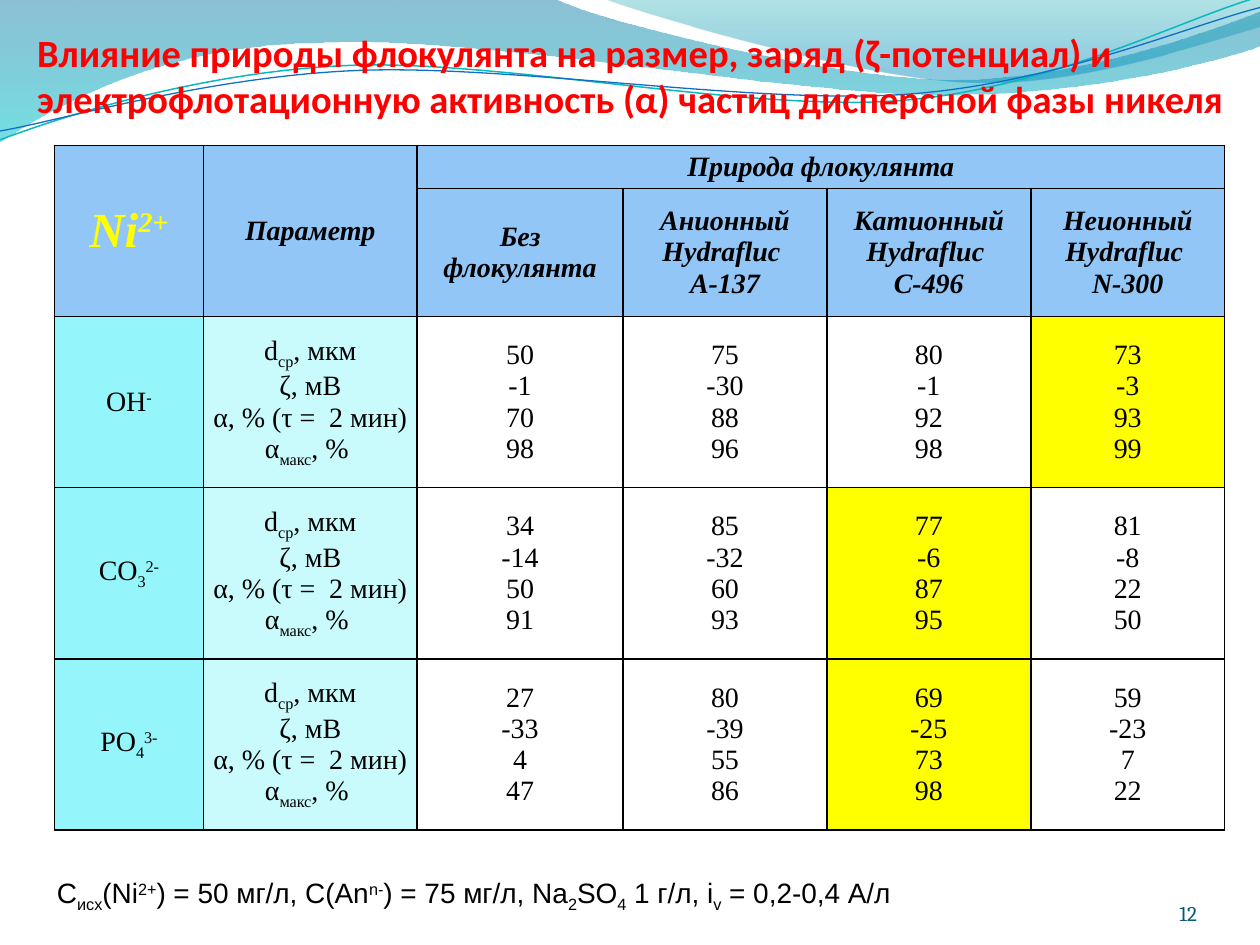
from lxml import etree
from pptx import Presentation
from pptx import util as u
from pptx.dml.color import RGBColor
from pptx.enum import text
from pptx.oxml.ns import qn

PARAMETERS = ["d|_ср|, мкм", "ζ, мВ", "α, % (τ =  2 мин)", "α|_макс|, % "]
FLOCCULANTS = ["Без флокулянта", "Анионный Hydrafluc \vA-137",
               "Катионный Hydrafluc \vC-496", "Неионный Hydrafluc \vN-300"]
# anion, values for each flocculant, index of the best flocculant
RESULTS = [
    ("ОН|^-", [(50, -1, 70, 98), (75, -30, 88, 96), (80, -1, 92, 98), (73, -3, 93, 99)], 3),
    ("CO|_3|^2-", [(34, -14, 50, 91), (85, -32, 60, 93), (77, -6, 87, 95), (81, -8, 22, 50)], 2),
    ("PO|_4|^3-", [(27, -33, 4, 47), (80, -39, 55, 86), (69, -25, 73, 98), (59, -23, 7, 22)], 2),
]
COLUMNS = [3.0, 4.31, 4.15, 4.11, 4.11, 3.91]
ROWS = [0.87, 2.58, 3.45, 3.45, 3.45]
HEADER, ANION, PARAMETER, BEST = "91C6F7", "94F5FA", "C9FAFC", "FFFF00"

# Wave outlines in tenths of the slide width: a pair is a line, six numbers a curve.
WIDE_WAVE = [(0, -0.01), (4.4, -0.01), (4.76, 0.17, 6.64, 0.63, 7.58, 0.63),
             (8.53, 0.63, 9.58, 0.26, 10, 0.09), (10.01, 0.36),
             (9.83, 0.44, 8.7, 0.76, 7.46, 0.75), (6.22, 0.75, 3.82, 0.28, 2.57, 0.34),
             (1.29, 0.35, 0.46, 0.83, -0.01, 1.13)]
RIGHT_WAVE = [(4.79, -0.01), (5.09, 0.11, 6.82, 0.62, 7.69, 0.65),
              (8.56, 0.69, 9.61, 0.32, 10, 0.21), (10, 0)]
TEAL_LINE = [(0, 1.11), (0.48, 0.93, 1.58, 0.57, 2.77, 0.52),
             (3.95, 0.47, 5.93, 0.89, 7.13, 0.8), (8.33, 0.71, 9.38, 0.15, 9.98, -0.02)]
BLUE_LINE = [(0, 1.04), (0.47, 0.96, 1.64, 0.61, 2.83, 0.56),
             (4.03, 0.51, 5.97, 0.83, 7.17, 0.75), (8.36, 0.67, 9.41, 0.21, 10, 0.06)]


def color(hex_value):
    return RGBColor.from_string(hex_value)


def write(paragraph, marked, font, size, hex_value, bold=False, italic=False, align=None):
    """Pieces are parted by |; a leading _ lowers a piece and ^ raises it."""
    paragraph.alignment = align
    style = paragraph.font
    style.name, style.size, style.bold, style.italic = font, u.Pt(size), bold, italic
    style.color.rgb = color(hex_value)
    if "|" not in marked:
        paragraph.text = marked
        return
    for piece in marked.split("|"):
        baseline = {"_": "-25000", "^": "30000"}.get(piece[0])
        run = paragraph.add_run()
        run.text = piece[1:] if baseline else piece
        if baseline:
            run.font.size = u.Pt(size)
            run._r.get_or_add_rPr().set("baseline", baseline)


def add_wave(slide, left, top, width, segments, closed):
    """Draws the control points as lines, then joins each curve's three into a Bézier."""
    start, *others = [(left + segment[i] * width / 10, top + segment[i + 1] * width / 10)
                      for segment in segments for i in range(0, len(segment), 2)]
    builder = slide.shapes.build_freeform(*start)
    builder.add_line_segments(others, close=closed)
    wave = builder.convert_to_shape()
    wave.shadow.inherit = False
    lines = iter(list(wave.element.iter(qn("a:lnTo"))))
    for segment in segments[1:]:
        first = next(lines)
        if len(segment) == 6:
            first.tag = qn("a:cubicBezTo")
            for _ in range(2):
                control = next(lines)
                first.append(control[0])
                control.getparent().remove(control)
    return wave


def add_waves(slide, left, top, width):
    bands = [(WIDE_WAVE, [(0, "0074A1", 45), (1, "00C6CF", 55)]),
             (RIGHT_WAVE, [(0, "00A1A9", 30), (0.8, "008BBF", 45)])]
    for segments, stops in bands:
        band = add_wave(slide, left, top, width, segments, True)
        band.line.fill.background()
        band.fill.gradient()
        band.fill.gradient_angle = 270
        for stop, (position, hex_value, _) in zip(band.fill.gradient_stops, stops):
            stop.position = position
            stop.color.rgb = color(hex_value)
        tints = band.element.spPr.iter(qn("a:srgbClr"))
        for tint, (_, _, opacity) in zip(tints, stops):
            etree.SubElement(tint, qn("a:alpha"), val=str(opacity * 1000))
    for segments, hex_value, weight in [(TEAL_LINE, "0AB8BF", 0.85), (BLUE_LINE, "0F6FC6", 0.75)]:
        line = add_wave(slide, left, top, width, segments, False)
        line.fill.background()
        line.line.color.rgb = color(hex_value)
        line.line.width = u.Pt(weight)


def add_borders(cell):
    properties = cell._tc.get_or_add_tcPr()
    for side in ("a:lnL", "a:lnR", "a:lnT", "a:lnB"):
        border = etree.SubElement(properties, qn(side), w=str(u.Pt(1)))
        fill = etree.SubElement(border, qn("a:solidFill"))
        etree.SubElement(fill, qn("a:srgbClr"), val="000000")


def fill_cell(cell, lines, background=None, size=16, hex_value="000000", heading=False):
    cell.vertical_anchor = text.MSO_ANCHOR.MIDDLE
    cell.margin_left = cell.margin_right = u.Cm(0.18)
    cell.margin_top = cell.margin_bottom = 0
    if background:
        cell.fill.solid()
        cell.fill.fore_color.rgb = color(background)
    else:
        cell.fill.background()
    frame = cell.text_frame
    for index, line in enumerate(lines):
        paragraph = frame.add_paragraph() if index else frame.paragraphs[0]
        write(paragraph, str(line), "Times New Roman", size, hex_value,
              heading, heading, text.PP_ALIGN.CENTER)


def add_results(slide, left, top):
    table = slide.shapes.add_table(len(ROWS), len(COLUMNS), left, top,
                                   u.Cm(sum(COLUMNS)), u.Cm(sum(ROWS))).table
    table.first_row = table.horz_banding = False
    for column, width in zip(table.columns, COLUMNS):
        column.width = u.Cm(width)
    for row, height in zip(table.rows, ROWS):
        row.height = u.Cm(height)
    for cell in table.iter_cells():
        add_borders(cell)
    for column in (0, 1):
        table.cell(0, column).merge(table.cell(1, column))
    table.cell(0, 2).merge(table.cell(0, 5))

    fill_cell(table.cell(0, 0), ["Ni|^2+"], HEADER, 28, "FFFF00", True)
    fill_cell(table.cell(0, 1), ["Параметр"], HEADER, heading=True)
    fill_cell(table.cell(0, 2), ["Природа флокулянта"], HEADER, heading=True)
    for column, flocculant in enumerate(FLOCCULANTS, 2):
        fill_cell(table.cell(1, column), [flocculant], HEADER, heading=True)
    for row, (anion, groups, best) in enumerate(RESULTS, 2):
        fill_cell(table.cell(row, 0), [anion], ANION)
        fill_cell(table.cell(row, 1), PARAMETERS, PARAMETER)
        for index, values in enumerate(groups):
            fill_cell(table.cell(row, index + 2), values, BEST if index == best else None)


def add_text(slide, box, marked, font, size, hex_value, bold=False, align=None,
             anchor=text.MSO_ANCHOR.TOP, inset=True):
    frame = slide.shapes.add_textbox(*map(u.Cm, box)).text_frame
    frame.word_wrap = True
    frame.vertical_anchor = anchor
    if not inset:
        frame.margin_left = frame.margin_right = frame.margin_top = frame.margin_bottom = 0
    write(frame.paragraphs[0], marked, font, size, hex_value, bold, align=align)


def main():
    deck = Presentation()
    deck.slide_width, deck.slide_height = u.Cm(25.4), u.Cm(19.05)
    slide = deck.slides.add_slide(deck.slide_layouts[6])
    add_waves(slide, 0, 0, deck.slide_width)
    add_results(slide, u.Cm(1.1), u.Cm(2.93))
    add_text(slide, (0.5, 0.45, 24.9, 2.13),
             "Влияние природы флокулянта на размер, заряд (ζ-потенциал) и "
             "электрофлотационную активность (α) частиц дисперсной фазы никеля",
             "Calibri", 22, "FF0000", bold=True, anchor=text.MSO_ANCHOR.MIDDLE)
    add_text(slide, (0.9, 17.53, 20.0, 0.94),
             "С|_исх|(Ni|^2+|) = 50 мг/л, С(An|^n-|) = 75 мг/л, Na|_2|SO|_4| 1 г/л, i|_v| = 0,2-0,4 А/л",
             "Arial", 16, "000000")
    add_text(slide, (22.02, 17.65, 2.11, 1.02), "12", "Cambria", 12, "045D75",
             align=text.PP_ALIGN.RIGHT, anchor=text.MSO_ANCHOR.BOTTOM, inset=False)
    deck.save("out.pptx")


if __name__ == "__main__":
    main()
